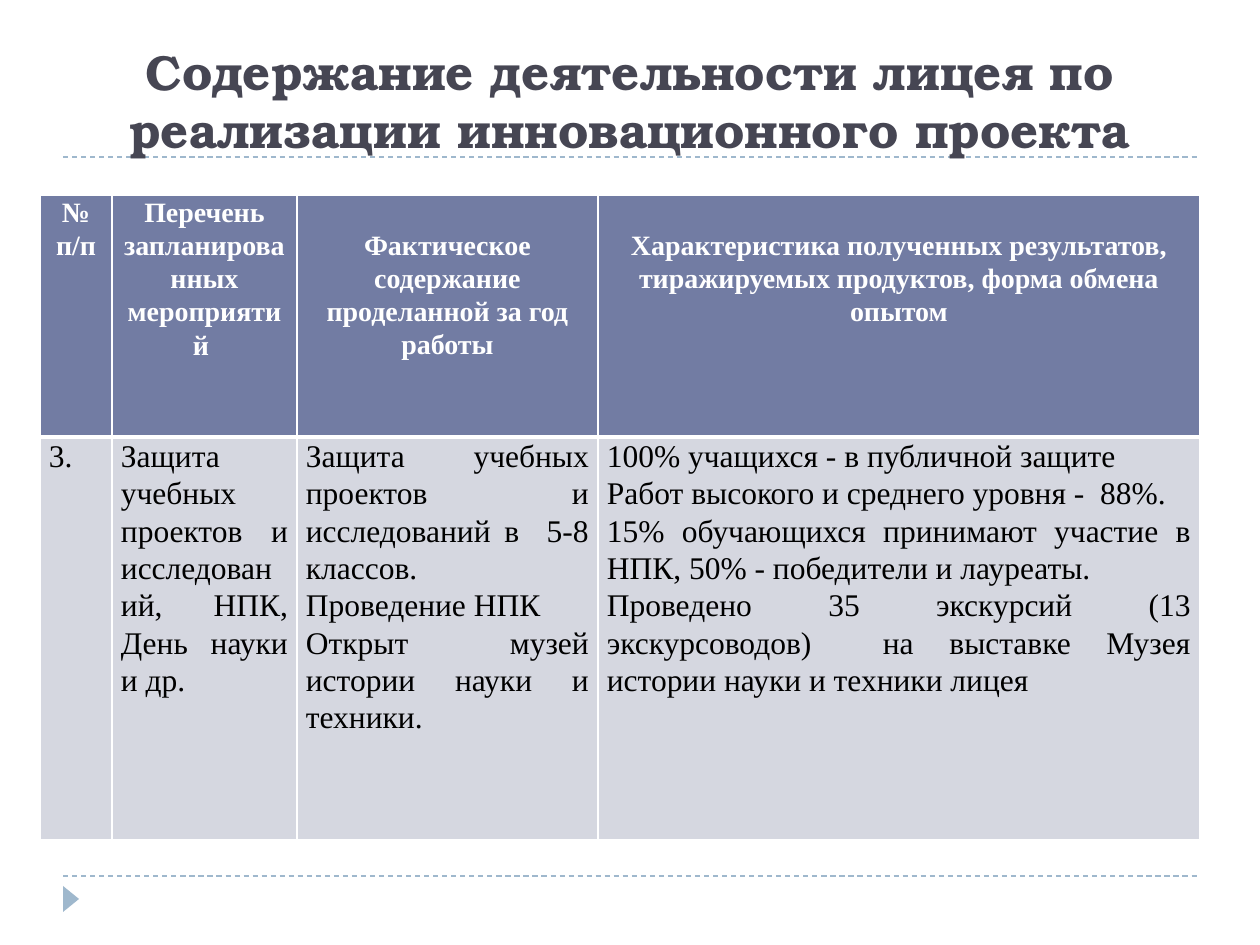
from lxml.etree import SubElement
from pptx import Presentation
from pptx.dml.color import RGBColor
from pptx.enum.dml import MSO_LINE
from pptx.enum.shapes import MSO_CONNECTOR, MSO_SHAPE
from pptx.enum.text import MSO_ANCHOR, PP_ALIGN
from pptx.oxml.ns import qn
from pptx.util import Emu, Pt

HEADINGS = [
    ["№", "п/п"],
    ["Перечень", "запланированных мероприятий "],
    ["Фактическое содержание проделанной за год работы"],
    ["Характеристика полученных результатов, тиражируемых продуктов, форма обмена опытом"],
]
ACTIVITY = [
    ["3."],
    ["Защита учебных проектов и исследований, НПК, День науки и др."],
    ["Защита учебных проектов и исследований в  5-8 классов.",
     "Проведение НПК",
     "Открыт музей истории науки и техники."],
    ["100% учащихся - в публичной защите ",
     "Работ высокого и среднего уровня -  88%.",
     "15% обучающихся принимают участие в НПК, 50% - победители и лауреаты.",
     "Проведено 35 экскурсий (13 экскурсоводов)  на выставке Музея истории науки и техники лицея"],
]
COLUMN_WIDTHS = [72, 185, 301, 602]
ROW_HEIGHTS = [242, 403]
HEADING_TOPS = [0, 0, 33, 33]


def px(length):
    return Emu(round(length * 914400 / 126))


def color(value):
    return RGBColor.from_string(value)


class LyceumSlide:
    TITLE_FONT = "TeX Gyre Bonum"
    TABLE_FONT = "Times New Roman"
    ACCENT = "9FB8CD"
    WHITE = "FFFFFF"

    def __init__(self, deck):
        self.slide = deck.slides.add_slide(deck.slide_layouts[6])
        self.shapes = self.slide.shapes

    def rule(self, left, right, y):
        rule = self.shapes.add_connector(MSO_CONNECTOR.STRAIGHT, px(left), px(y), px(right), px(y))
        rule.line.color.rgb = color(self.ACCENT)
        rule.line.width = Pt(0.75)
        rule.line.dash_style = MSO_LINE.DASH
        SubElement(rule._element.spPr, qn("a:effectLst"))

    def marker(self, left, top, width, height):
        marker = self.shapes.add_shape(
            MSO_SHAPE.ISOSCELES_TRIANGLE, px(left), px(top), px(width), px(height))
        marker.rotation = 90
        marker.shadow.inherit = False
        marker.fill.solid()
        marker.fill.fore_color.rgb = color(self.ACCENT)
        marker.line.fill.background()

    def paragraph(self, paragraph, text, font, size, ink, bold, align):
        paragraph.text = text
        paragraph.alignment = align
        paragraph.font.name = font
        paragraph.font.size = Pt(size)
        paragraph.font.bold = bold
        paragraph.font.color.rgb = color(ink)

    def title(self, text, left, top, width, height):
        frame = self.shapes.add_textbox(px(left), px(top), px(width), px(height)).text_frame
        frame.word_wrap = True
        frame.vertical_anchor = MSO_ANCHOR.BOTTOM
        self.paragraph(frame.paragraphs[0], text, self.TITLE_FONT, 28, "464653", True,
                       PP_ALIGN.CENTER)

    def borders(self, cell, top, bottom):
        properties = cell._tc.get_or_add_tcPr()
        for side, width in (("L", 1), ("R", 1), ("T", top), ("B", bottom)):
            border = SubElement(properties, qn(f"a:ln{side}"), w=str(Pt(width)))
            fill = SubElement(border, qn("a:solidFill"))
            SubElement(fill, qn("a:srgbClr"), val=self.WHITE)

    def cell(self, cell, lines, size, ink, bold, align, fill, edges, inset):
        self.borders(cell, *edges)
        cell.fill.solid()
        cell.fill.fore_color.rgb = color(fill)
        cell.margin_left = cell.margin_right = px(9)
        cell.margin_top, cell.margin_bottom = px(inset), 0
        frame = cell.text_frame
        for index, line in enumerate(lines):
            paragraph = frame.add_paragraph() if index else frame.paragraphs[0]
            self.paragraph(paragraph, line, self.TABLE_FONT, size, ink, bold, align)
            paragraph.line_spacing = 1.07

    def table(self, left, top):
        table = self.shapes.add_table(
            len(ROW_HEIGHTS), len(COLUMN_WIDTHS), px(left), px(top),
            px(sum(COLUMN_WIDTHS)), px(sum(ROW_HEIGHTS))).table
        for column, width in zip(table.columns, COLUMN_WIDTHS):
            column.width = px(width)
        for row, height in zip(table.rows, ROW_HEIGHTS):
            row.height = px(height)
        for index, (heading, activity) in enumerate(zip(HEADINGS, ACTIVITY)):
            self.cell(table.cell(0, index), heading, 16, self.WHITE, True, PP_ALIGN.CENTER,
                      "727CA3", (1, 3), HEADING_TOPS[index])
            self.cell(table.cell(1, index), activity, 18, "000000", False, PP_ALIGN.JUSTIFY,
                      "D5D7E0", (3, 1), 0)


def main():
    deck = Presentation()
    deck.slide_width, deck.slide_height = px(1260), px(945)
    page = LyceumSlide(deck)
    for y in (876, 157):
        page.rule(63, 1197, y)
    page.marker(58, 891, 26, 16)
    page.title("Содержание деятельности лицея по реализации инновационного проекта",
               63, 21, 1134, 144)
    page.table(40, 195)
    deck.save("out.pptx")


if __name__ == "__main__":
    main()
